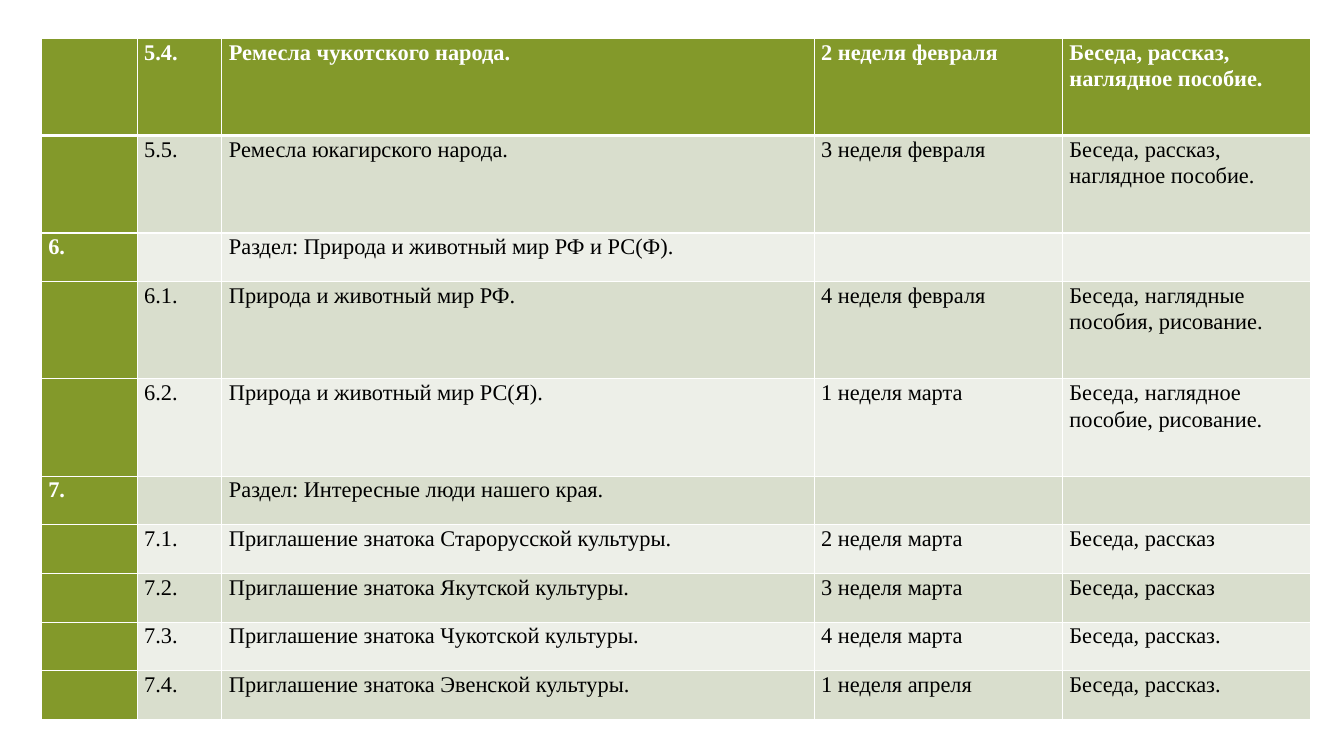
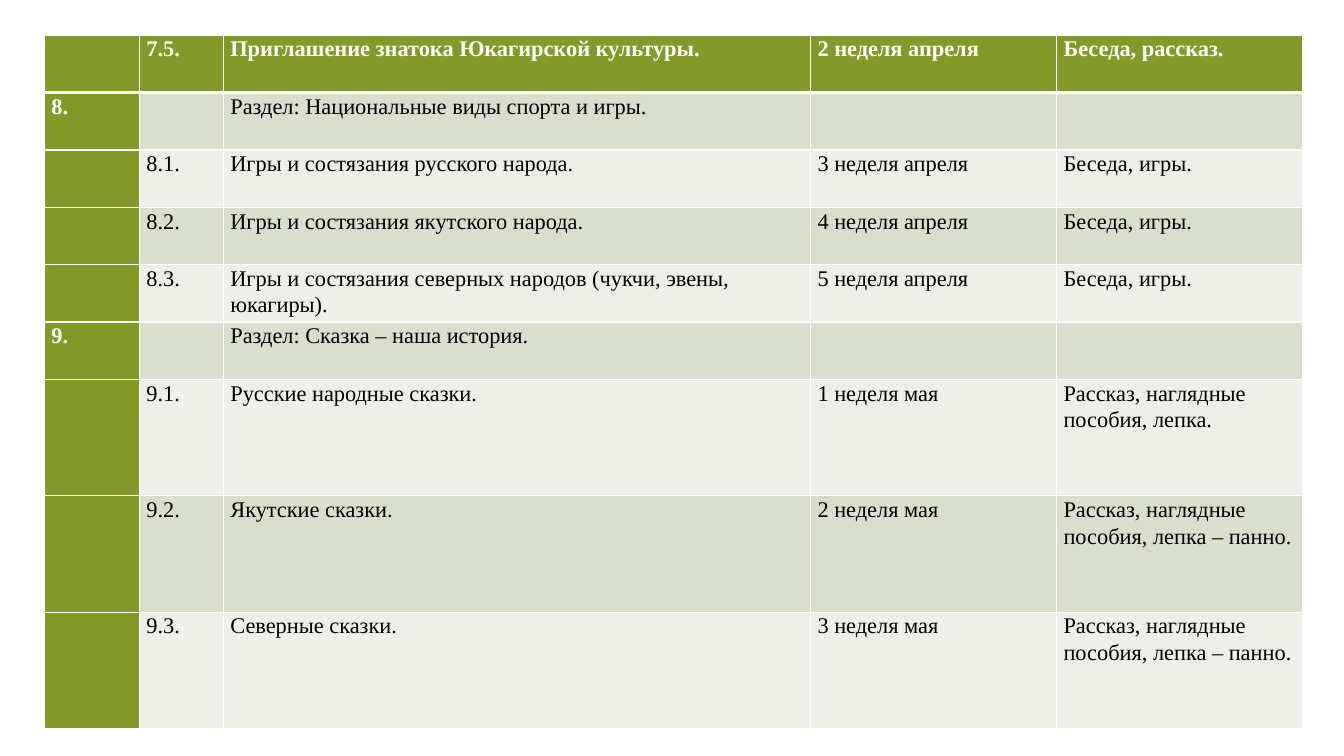
from pptx import Presentation, util as u
from pptx.dml.color import RGBColor
from lxml import etree

HUES = {"main": "83992A", "odd": "D9DECD", "even": "EDEFE8", "line": "FFFFFF", "ink": "000000"}
FONT = {"name": "Times New Roman", "size": u.Pt(16)}
PADS = {"margin_left": 0.07, "margin_right": 0.07, "margin_top": 0, "margin_bottom": 0}
COLS = [0.95, 0.84, 5.87, 2.46, 2.46]
NS = "http://schemas.openxmlformats.org/drawingml/2006/main"

WINTER = [
    ("", "5.4.", "Ремесла чукотского народа.", "2 неделя февраля", "Беседа, рассказ, наглядное пособие."),
    ("", "5.5.", "Ремесла юкагирского народа.", "3 неделя февраля", "Беседа, рассказ, наглядное пособие."),
    ("6.", "", "Раздел: Природа и животный мир РФ и РС(Ф).", "", ""),
    ("", "6.1.", "Природа и животный мир РФ.", "4 неделя февраля", "Беседа, наглядные пособия, рисование."),
    ("", "6.2.", "Природа и животный мир РС(Я).", "1 неделя марта", "Беседа, наглядное пособие, рисование."),
    ("7.", "", "Раздел: Интересные люди нашего края.", "", ""),
    ("", "7.1.", "Приглашение знатока Старорусской культуры.", "2 неделя марта", "Беседа, рассказ"),
    ("", "7.2.", "Приглашение знатока Якутской культуры.", "3 неделя марта", "Беседа, рассказ"),
    ("", "7.3.", "Приглашение знатока Чукотской культуры.", "4 неделя марта", "Беседа, рассказ."),
    ("", "7.4.", "Приглашение знатока Эвенской культуры.", "1 неделя апреля", "Беседа, рассказ."),
]
SPRING = [
    ("", "7.5.", "Приглашение знатока Юкагирской культуры.", "2 неделя апреля", "Беседа, рассказ."),
    ("8.", "", "Раздел: Национальные виды спорта и игры.", "", ""),
    ("", "8.1.", "Игры и состязания русского народа.", "3 неделя апреля", "Беседа, игры."),
    ("", "8.2.", "Игры и состязания якутского народа.", "4 неделя апреля", "Беседа, игры."),
    ("", "8.3.", "Игры и состязания северных народов (чукчи, эвены, юкагиры).", "5 неделя апреля", "Беседа, игры."),
    ("9.", "", "Раздел: Сказка – наша история.", "", ""),
    ("", "9.1.", "Русские народные сказки.", "1 неделя мая", "Рассказ, наглядные пособия, лепка."),
    ("", "9.2.", "Якутские сказки.", "2 неделя мая", "Рассказ, наглядные пособия, лепка – панно."),
    ("", "9.3.", "Северные сказки.", "3 неделя мая", "Рассказ, наглядные пособия, лепка – панно."),
]


def split(total, parts):
    """Share a length out in proportion to the parts."""
    return [u.Inches(total * part / sum(parts)) for part in parts]


def edge(cell, row):
    """Draw white cell borders, thick below the head row."""
    props = cell._tc.get_or_add_tcPr()
    thick = {0: "B", 1: "T"}.get(row)
    for side in "LRTB":
        width = u.Pt(3 if side == thick else 1)
        line = etree.SubElement(props, f"{{{NS}}}ln{side}", w=str(width))
        fill = etree.SubElement(line, f"{{{NS}}}solidFill")
        etree.SubElement(fill, f"{{{NS}}}srgbClr", val=HUES["line"])


def style(cell, words, row, col):
    """Fill one cell and set its text."""
    head = row == 0 or col == 0
    hue = "main" if head else ("odd" if row % 2 else "even")
    edge(cell, row)
    cell.fill.solid()
    cell.fill.fore_color.rgb = RGBColor.from_string(HUES[hue])
    for key, pad in PADS.items():
        setattr(cell, key, u.Inches(pad))
    cell.text = words
    para = cell.text_frame.paragraphs[0]
    para.line_spacing = 1.07
    for key, value in {**FONT, "bold": head}.items():
        setattr(para.font, key, value)
    para.font.color.rgb = RGBColor.from_string(HUES["line" if head else "ink"])


def plan(deck, box, rows, tall):
    """Add a slide with a lesson table in the box, rows with long methods being taller."""
    left, top, width, height = box
    slide = deck.slides.add_slide(deck.slide_layouts[6])
    table = slide.shapes.add_table(len(rows), len(COLS), *map(u.Inches, box)).table
    table.first_row = table.horz_banding = False
    for col, size in zip(table.columns, split(width, COLS)):
        col.width = size
    parts = [tall if len(row[-1]) > 20 else 1 for row in rows]
    for line, size in zip(table.rows, split(height, parts)):
        line.height = size
    for i, row in enumerate(rows):
        for j, words in enumerate(row):
            style(table.cell(i, j), words, i, j)


def main():
    """Build and save the deck."""
    deck = Presentation()
    deck.slide_width, deck.slide_height = u.Inches(13.33), u.Inches(7.5)
    plan(deck, (0.41, 0.38, 12.59, 6.76), WINTER, 2)
    plan(deck, (0.44, 0.35, 12.48, 6.88), SPRING, 2.03)
    deck.save("out.pptx")


if __name__ == "__main__":
    main()
